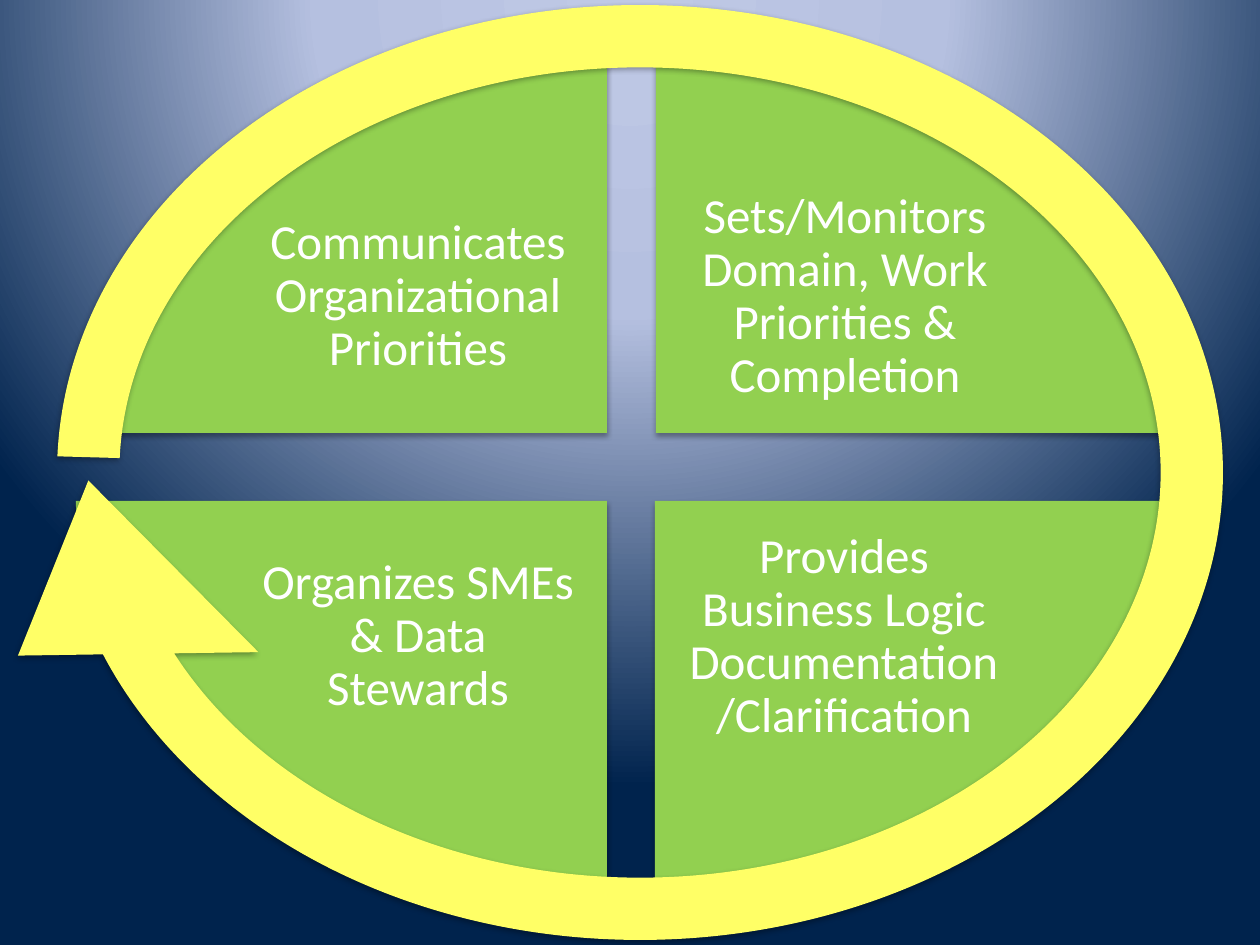
from lxml.etree import SubElement
from pptx import Presentation
from pptx.dml.color import RGBColor
from pptx.enum.shapes import MSO_SHAPE
from pptx.enum.text import MSO_ANCHOR, PP_ALIGN
from pptx.oxml import parse_xml
from pptx.oxml.ns import nsdecls, qn
from pptx.util import Pt

# Text, left, top, and which side of the ring (column, row) the quarter is on
QUARTERS = [
    ("Communicates Organizational Priorities", 76, 30, 0, 0),
    ("Sets/Monitors Domain, Work Priorities & Completion", 656, 30, 1, 0),
    ("Provides Business Logic Documentation/Clarification", 655, 501, 1, 1),
    ("Organizes SMEs & Data Stewards", 76, 501, 0, 1),
]
QUARTER_W, QUARTER_H = 531, 403
INSET, OUTER_X, OUTER_Y = 28, 181, 159
ARROW_BOX = (-32, -84, 1344, 1113)
ARROW_ADJ = (0.056, 11.423, 204.079, 0.953, 0.108)
THEME = {
    "quarter": "92D050", "arrow": "FFFF66", "text": "FFFFFF", "shadow": "000000",
    "font": "Calibri", "size": 28,
    "background": [(0, "BFC9E5"), (40, "B5C0E0"), (100, "00234D")],
}
ARC = 0.55  # Bezier handle length for a quarter ellipse


def px(n):
    return round(n * 914400 / 126)


def set_background(slide):
    stops = "".join(
        f'<a:gs pos="{pos * 1000}"><a:srgbClr val="{color}"/></a:gs>'
        for pos, color in THEME["background"])
    slide._element.cSld.insert(0, parse_xml(
        f'<p:bg {nsdecls("p", "a")}><p:bgPr><a:gradFill rotWithShape="1">'
        f'<a:gsLst>{stops}</a:gsLst><a:path path="circle">'
        '<a:fillToRect l="50000" t="-80000" r="50000" b="180000"/></a:path>'
        '</a:gradFill><a:effectLst/></p:bgPr></p:bg>'))


def style(sp, color):
    """Plain fill, no line, soft shadow straight below."""
    sp.fill.solid()
    sp.fill.fore_color.rgb = RGBColor.from_string(color)
    sp.line.fill.background()
    sp.shadow.inherit = False
    sp._element.spPr.find(qn("a:effectLst")).append(parse_xml(
        f'<a:outerShdw {nsdecls("a")} blurRad="40000" dist="23000" dir="5400000" '
        f'rotWithShape="0"><a:srgbClr val="{THEME["shadow"]}">'
        '<a:alpha val="35000"/></a:srgbClr></a:outerShdw>'))


def round_first_edge(sp):
    """Turn the first straight edge of a triangle into a quarter ellipse."""
    path = sp._element.spPr.find(".//" + qn("a:path"))
    (x0, y0), (x1, y1), (cx, cy) = [
        (int(pt.get("x")), int(pt.get("y"))) for pt in path.iter(qn("a:pt"))][:3]
    tx, ty = x0 + x1 - cx, y0 + y1 - cy
    edge = path.find(qn("a:lnTo"))
    curve = SubElement(path, qn("a:cubicBezTo"))
    for x, y in ((x0 + (tx - x0) * ARC, y0 + (ty - y0) * ARC),
                 (x1 + (tx - x1) * ARC, y1 + (ty - y1) * ARC), (x1, y1)):
        SubElement(curve, qn("a:pt"), x=str(round(x)), y=str(round(y)))
    path.replace(edge, curve)


def add_quarter(shapes, text, left, top, col, row):
    right, bottom = left + QUARTER_W, top + QUARTER_H
    inner_x, outer_x = (left, right) if col else (right, left)
    inner_y, outer_y = (top, bottom) if row else (bottom, top)
    points = [(px(x), px(y)) for x, y in (
        (outer_x, inner_y), (inner_x, outer_y), (inner_x, inner_y))]
    builder = shapes.build_freeform(*points[0])
    builder.add_line_segments(points[1:], close=True)
    sp = builder.convert_to_shape()
    round_first_edge(sp)
    style(sp, THEME["quarter"])

    tf = sp.text_frame
    frame = {
        "word_wrap": True, "vertical_anchor": MSO_ANCHOR.MIDDLE,
        "margin_left": px(INSET if col else OUTER_X),
        "margin_right": px(OUTER_X if col else INSET),
        "margin_top": px(INSET if row else OUTER_Y),
        "margin_bottom": px(OUTER_Y if row else INSET),
    }
    for name, value in frame.items():
        setattr(tf, name, value)
    p = tf.paragraphs[0]
    p.alignment, p.line_spacing = PP_ALIGN.CENTER, 0.9
    r = p.add_run()
    r.text = text
    r.font.name, r.font.size = THEME["font"], Pt(THEME["size"])
    r.font.color.rgb = RGBColor.from_string(THEME["text"])


def add_ring_arrow(shapes):
    sp = shapes.add_shape(MSO_SHAPE.CIRCULAR_ARROW, *map(px, ARROW_BOX))
    sp.rotation = 180
    for i, value in enumerate(ARROW_ADJ):
        sp.adjustments[i] = value
    style(sp, THEME["arrow"])


def main():
    prs = Presentation()
    prs.slide_width, prs.slide_height = px(1260), px(945)
    slide = prs.slides.add_slide(prs.slide_layouts[6])
    set_background(slide)
    cycle = slide.shapes.add_group_shape().shapes
    for quarter in QUARTERS:
        add_quarter(cycle, *quarter)
    add_ring_arrow(cycle)
    prs.save("out.pptx")


if __name__ == "__main__":
    main()
